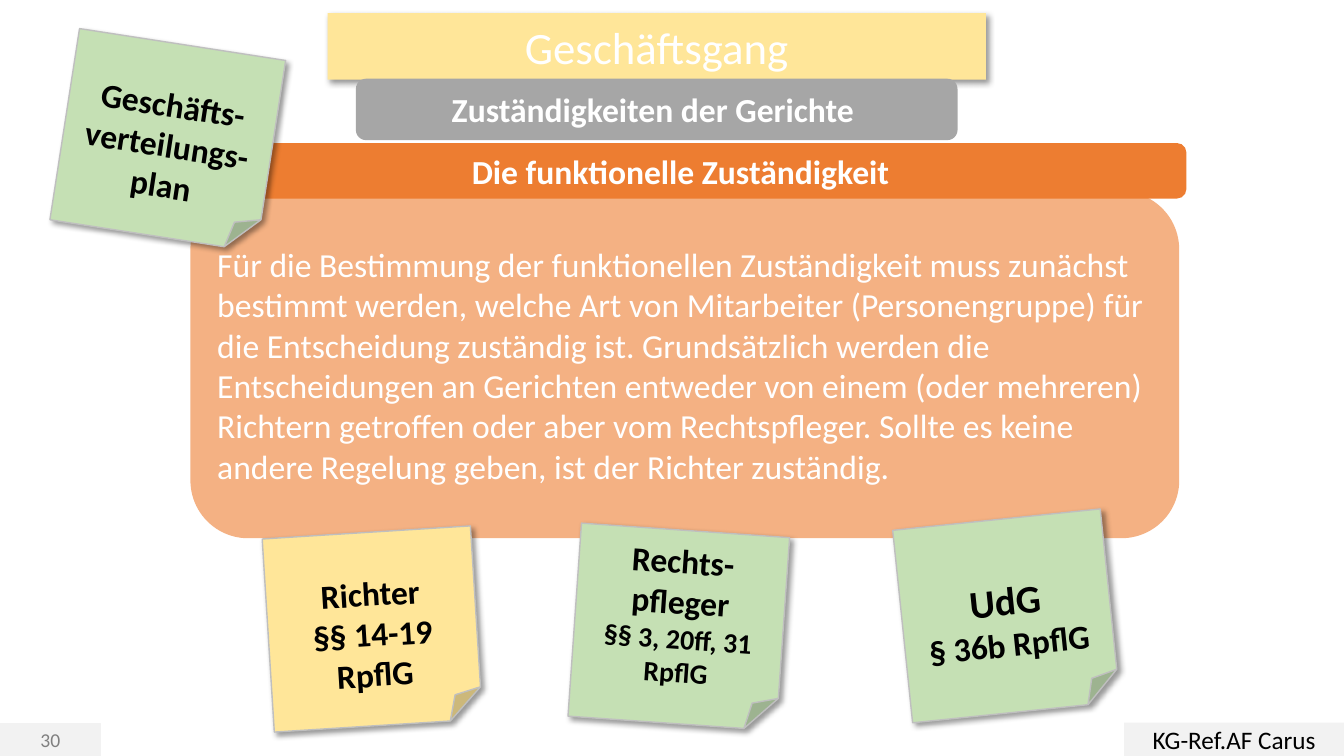
from lxml import etree
from pptx import Presentation
from pptx.dml.color import RGBColor
from pptx.enum.shapes import MSO_SHAPE
from pptx.enum.text import MSO_ANCHOR, MSO_AUTO_SIZE, PP_ALIGN
from pptx.oxml import parse_xml
from pptx.oxml.ns import nsdecls, qn
from pptx.util import Pt

RECT, ROUNDED, NOTE = MSO_SHAPE.RECTANGLE, MSO_SHAPE.ROUNDED_RECTANGLE, MSO_SHAPE.FOLDED_CORNER
MIDDLE = MSO_ANCHOR.MIDDLE
FIXED = MSO_AUTO_SIZE.NONE
LEFT, CENTER = PP_ALIGN.LEFT, PP_ALIGN.CENTER
FONT = "Calibri"
COLORS = {
    "white": "FFFFFF", "black": "000000", "yellow": "FFE699", "green": "C5E0B4",
    "orange": "ED7D31", "apricot": "F4B183", "gray": "A6A6A6", "pale": "F2F2F2",
    "edge": "BFBFBF", "number": "808080",
}
NOTE_SIZE = (149, 138.2)
EXPLANATION = (
    "Für die Bestimmung der funktionellen Zuständigkeit muss zunächst bestimmt werden, "
    "welche Art von Mitarbeiter (Personengruppe) für die Entscheidung zuständig ist. "
    "Grundsätzlich werden die Entscheidungen an Gerichten entweder von einem (oder mehreren) "
    "Richtern getroffen oder aber vom Rechtspfleger. Sollte es keine andere Regelung geben, "
    "ist der Richter zuständig."
)
NOTES = [
    (45.4, 31, 8.8, "green", 29, [("Geschäfts-verteilungs-plan", 24)]),
    (191.5, 380.2, -3.6, "yellow", 29, [("Richter", 24), ("§§ 14-19 RpflG", 24)]),
    (410.4, 378.7, 4, "green", 5, [("Rechts-pfleger", 24), ("§§ 3, 20ff, 31 RpflG", 20)]),
    (644.4, 370.8, -5.9, "green", 29, [("UdG", 28), ("§ 36b RpflG", 24)]),
]


class CourtSlide:
    """Holds the style and the current slide."""

    def __init__(self, deck):
        self.slide = deck.slides.add_slide(deck.slide_layouts[5])

    def color(self, name):
        return RGBColor.from_string(COLORS[name])

    def paint(self, shape, fill):
        shape.fill.solid()
        shape.fill.fore_color.rgb = self.color(fill)

    def cast_shadow(self, shape):
        shape.shadow.inherit = False
        effects = shape._element.spPr.find(qn("a:effectLst"))
        effects.append(parse_xml(
            f'<a:outerShdw {nsdecls("a")} blurRad="{Pt(4)}" dist="{Pt(3)}" dir="2700000" '
            'algn="tl" rotWithShape="0"><a:srgbClr val="000000"><a:alpha val="40000"/>'
            '</a:srgbClr></a:outerShdw>'))

    def set_text(self, shape, lines, color, bold=False, align=CENTER):
        frame = shape.text_frame
        frame.text = "\n".join(text for text, size in lines)
        frame.word_wrap = True
        frame.auto_size = FIXED
        frame.vertical_anchor = MIDDLE
        for paragraph, (text, size) in zip(frame.paragraphs, lines):
            paragraph.alignment = align
            for run in paragraph.runs:
                run.font.name = FONT
                run.font.size = Pt(size)
                run.font.bold = bold
                run.font.color.rgb = self.color(color)

    def title(self, text, box, fill):
        heading = self.slide.shapes.title
        heading.left, heading.top, heading.width, heading.height = map(Pt, box)
        geometry = etree.SubElement(heading._element.spPr, qn("a:prstGeom"), prst="roundRect")
        etree.SubElement(geometry, qn("a:avLst"))
        self.paint(heading, fill)
        self.cast_shadow(heading)
        self.set_text(heading, [(text, 32)], "white")

    def panel(self, kind, box, fill, lines, color, edge=None, **style):
        panel = self.slide.shapes.add_shape(kind, *map(Pt, box))
        panel.shadow.inherit = False
        self.paint(panel, fill)
        if edge:
            panel.line.color.rgb = self.color(edge)
            panel.line.width = Pt(1)
        else:
            panel.line.fill.background()
        self.set_text(panel, lines, color, **style)
        return panel

    def note(self, left, top, angle, fill, drop, lines):
        note = self.panel(NOTE, (left, top, *NOTE_SIZE), fill, lines, "black", "edge", bold=True)
        note.rotation = angle
        note.text_frame.margin_top = Pt(drop)
        note.text_frame.margin_bottom = Pt(0)
        self.cast_shadow(note)


def main():
    deck = Presentation()
    deck.slide_width, deck.slide_height = Pt(960), Pt(540)
    court = CourtSlide(deck)
    court.title("Geschäftsgang", (234, 9.4, 470.2, 47.5), "yellow")
    court.panel(ROUNDED, (136, 136.8, 706.3, 247.7), "apricot", [(EXPLANATION, 24)], "white",
                align=LEFT)
    court.panel(RECT, (0, 517, 72, 23), "pale", [("30", 14)], "number", "pale")
    court.panel(RECT, (803, 516.2, 157, 23.8), "pale", [("KG-Ref.AF Carus", 18)], "black")
    court.panel(ROUNDED, (130.3, 102.2, 717.1, 39.6), "orange",
                [("Die funktionelle Zuständigkeit ", 24)], "white", bold=True)
    court.panel(ROUNDED, (254.2, 56.2, 429.8, 43.9), "gray",
                [("Zuständigkeiten der Gerichte ", 24)], "white", bold=True)
    for note in NOTES:
        court.note(*note)
    deck.save("out.pptx")


if __name__ == "__main__":
    main()
